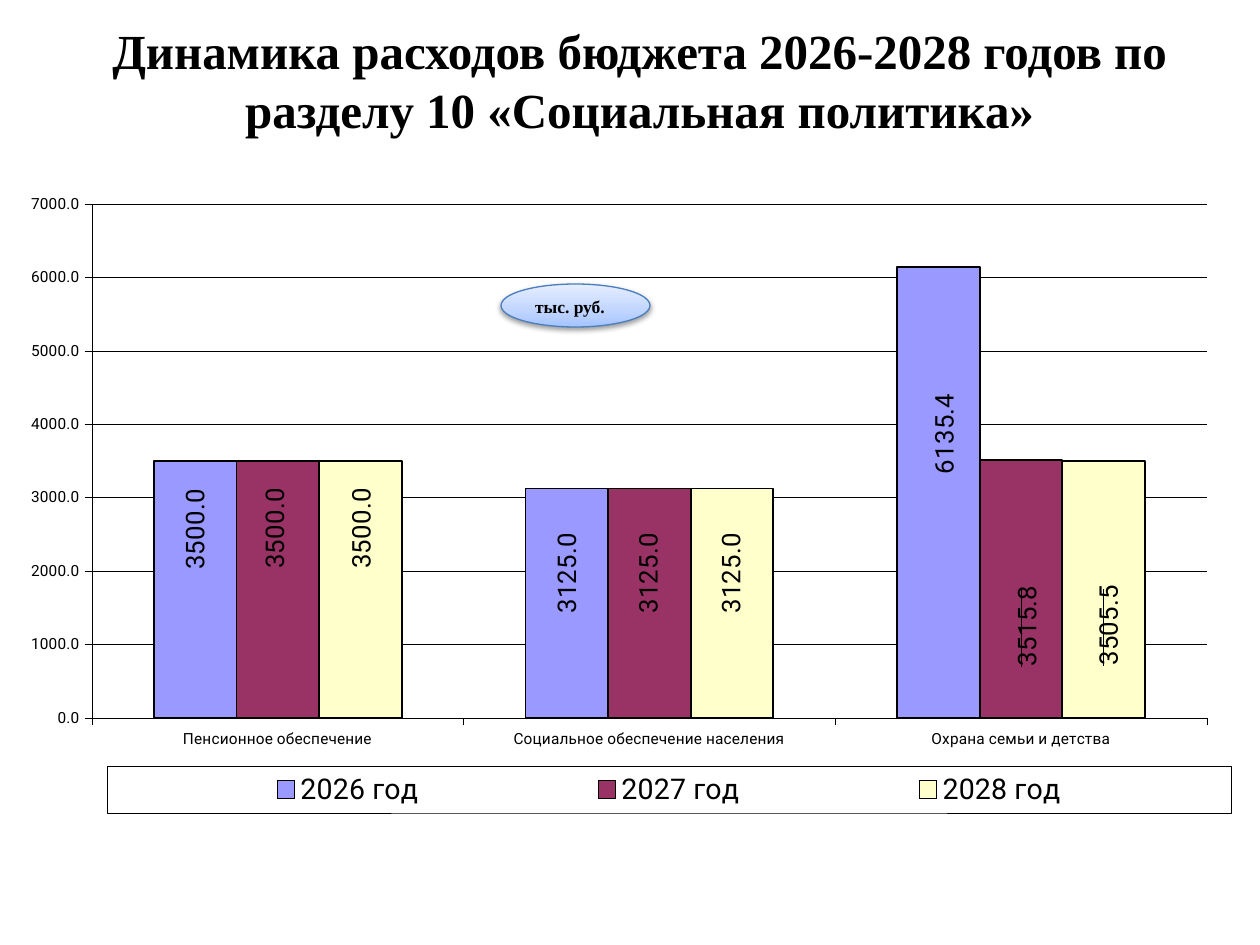
from copy import deepcopy

from pptx import Presentation
from pptx.chart.data import CategoryChartData
from pptx.dml.color import RGBColor
from pptx.enum.chart import XL_CHART_TYPE as CHART, XL_LABEL_POSITION as LABEL_POS
from pptx.enum.chart import XL_LEGEND_POSITION as LEGEND_POS, XL_TICK_LABEL_POSITION as TICK_POS
from pptx.enum.chart import XL_TICK_MARK as TICK
from pptx.enum.shapes import MSO_SHAPE as SHAPE
from pptx.enum.text import MSO_ANCHOR as ANCHOR, PP_ALIGN as ALIGN
from pptx.oxml import parse_xml
from pptx.oxml.ns import nsdecls, qn
from pptx.util import Emu, Pt

PX = 914400 / 126
BLACK = RGBColor(0x00, 0x00, 0x00)
BLUE = RGBColor(0x99, 0x99, 0xFF)
PLUM = RGBColor(0x99, 0x33, 0x66)
CREAM = RGBColor(0xFF, 0xFF, 0xCC)
BADGE_LINE = RGBColor(0x4B, 0x7E, 0xBC)
BADGE_STOPS = [(0, RGBColor(0xA4, 0xC4, 0xFF)),
               (35, RGBColor(0xBF, 0xD4, 0xFF)),
               (100, RGBColor(0xE6, 0xEE, 0xFF))]

CHART_BOX = (8, 181, 1225, 634)
PLOT_BOX = (92, 204, 1115, 514)
LEGEND_BOX = (107, 766, 1124, 47)
CATEGORIES = ["Пенсионное обеспечение", "Социальное обеспечение населения",
              "Охрана семьи и детства"]
# name, colour, values, label shifts from the bar centre in px
SERIES = [
    ("2026 год", BLUE, (3500, 3125, 6135.4), [(0, -60), (0, -30), (6, -59)]),
    ("2027 год", PLUM, (3500, 3125, 3515.8), [(-3, -61), (-1, -30), (6, 37)]),
    ("2028 год", CREAM, (3500, 3125, 3505.5), [(1, -61), (-1, -30), (5, 36)]),
]


def px(n):
    return Emu(round(n * PX))


def set_font(font, name, size, bold=False):
    values = {"name": name, "size": Pt(size), "bold": bold}
    for key, value in values.items():
        setattr(font, key, value)
    font.color.rgb = BLACK


def set_line(line, color, width):
    line.color.rgb = color
    line.width = Pt(width)


def set_text(sp, text, size, align, anchor):
    tf = sp.text_frame
    tf.word_wrap = True
    tf.vertical_anchor = anchor
    p = tf.paragraphs[0]
    p.alignment = align
    r = p.add_run()
    r.text = text
    set_font(r.font, "Times New Roman", size, bold=True)


def layout_xml(extra, **fractions):
    tags = "".join(f'<c:{key} val="{value:.4f}"/>' for key, value in fractions.items())
    return parse_xml(f'<c:layout {nsdecls("c")}><c:manualLayout>{extra}{tags}'
                     '</c:manualLayout></c:layout>')


def box_layout(box, target=""):
    """Layout of a chart part whose box is given in slide px."""
    left, top, width, height = CHART_BOX
    modes = '<c:xMode val="edge"/><c:yMode val="edge"/>'
    return layout_xml(target + modes, x=(box[0] - left) / width, y=(box[1] - top) / height,
                      w=box[2] / width, h=box[3] / height)


def style_axis(axis):
    axis.major_tick_mark = TICK.OUTSIDE
    axis.minor_tick_mark = TICK.NONE
    set_font(axis.tick_labels.font, "Roboto", 8.8)
    set_line(axis.format.line, BLACK, 0.28)


def style_legend(chart):
    chart.has_legend = True
    legend = chart.legend
    legend.position = LEGEND_POS.BOTTOM
    legend.include_in_layout = False
    set_font(legend.font, "Roboto", 16.3)
    element = legend._element
    element.find(qn("c:legendPos")).addnext(box_layout(LEGEND_BOX))
    element.find(qn("c:overlay")).addnext(parse_xml(
        f'<c:spPr {nsdecls("c", "a")}><a:noFill/><a:ln w="3556"><a:solidFill>'
        f'<a:srgbClr val="{BLACK}"/></a:solidFill></a:ln></c:spPr>'))


def add_labels(series, shifts):
    """Upright value labels, each moved from the centre of its bar."""
    labels = series.data_labels
    formats = {"show_value": True, "number_format": "0.0",
               "number_format_is_linked": False, "position": LABEL_POS.CENTER}
    for key, value in formats.items():
        setattr(labels, key, value)
    set_font(labels.font, "Roboto", 14.7)
    element = labels._element
    body = element.find(qn("c:txPr")).find(qn("a:bodyPr"))
    body.set("rot", "-5400000")
    body.set("vert", "horz")
    shared = [child for child in element if child.tag != qn("c:showLeaderLines")]
    for i, (dx, dy) in enumerate(shifts):
        label = parse_xml(f'<c:dLbl {nsdecls("c")}><c:idx val="{i}"/></c:dLbl>')
        label.append(layout_xml("", x=dx / CHART_BOX[2], y=dy / CHART_BOX[3]))
        for child in shared:
            label.append(deepcopy(child))
        element.insert(i, label)


def add_budget_chart(slide):
    data = CategoryChartData(number_format="0.0")
    data.categories = CATEGORIES
    for name, _, values, _ in SERIES:
        data.add_series(name, values)
    chart = slide.shapes.add_chart(CHART.COLUMN_CLUSTERED, *map(px, CHART_BOX), data).chart
    chart.has_title = False
    set_font(chart.font, "Roboto", 8.8)
    style_legend(chart)

    style_axis(chart.category_axis)
    chart.category_axis.tick_label_position = TICK_POS.LOW
    axis = chart.value_axis
    style_axis(axis)
    limits = {"minimum_scale": 0, "maximum_scale": 7000, "major_unit": 1000}
    for key, value in limits.items():
        setattr(axis, key, value)
    axis.tick_labels.number_format = "0.0"
    axis.tick_labels.number_format_is_linked = False
    set_line(axis.major_gridlines.format.line, BLACK, 0.28)

    plot = chart.plots[0]
    plot.vary_by_categories = False
    plot.gap_width = 150
    plot.overlap = 0
    for series, (_, color, _, shifts) in zip(plot.series, SERIES):
        series.format.fill.solid()
        series.format.fill.fore_color.rgb = color
        set_line(series.format.line, BLACK, 1.11)
        add_labels(series, shifts)

    area = chart._chartSpace.chart.plotArea
    for old in area.findall(qn("c:layout")):
        area.remove(old)
    area.insert(0, box_layout(PLOT_BOX, '<c:layoutTarget val="inner"/>'))


def add_title(slide, text, *box):
    sp = slide.shapes.add_textbox(*map(px, box))
    set_text(sp, text, 28, ALIGN.CENTER, ANCHOR.MIDDLE)


def add_unit_badge(slide, text, *box):
    sp = slide.shapes.add_shape(SHAPE.OVAL, *map(px, box))
    stops = "".join(f'<a:gs pos="{pos * 1000}"><a:srgbClr val="{color}"/></a:gs>'
                    for pos, color in BADGE_STOPS)
    properties = sp._element.spPr
    properties.append(parse_xml(
        f'<a:gradFill {nsdecls("a")} rotWithShape="1"><a:gsLst>{stops}</a:gsLst>'
        '<a:lin ang="16200000" scaled="1"/></a:gradFill>'))
    set_line(sp.line, BADGE_LINE, 0.75)
    properties.append(parse_xml(
        f'<a:effectLst {nsdecls("a")}><a:outerShdw blurRad="40000" dist="20000" '
        f'dir="5400000" rotWithShape="0"><a:srgbClr val="{BLACK}">'
        '<a:alpha val="38000"/></a:srgbClr></a:outerShdw></a:effectLst>'))
    set_text(sp, text, 10, ALIGN.LEFT, ANCHOR.TOP)


def main():
    prs = Presentation()
    prs.slide_width, prs.slide_height = px(1260), px(945)
    slide = prs.slides.add_slide(prs.slide_layouts[6])
    add_budget_chart(slide)
    add_title(slide, "Динамика расходов бюджета 2026-2028 годов по разделу 10 "
              "«Социальная политика»", 63, 53, 1153, 53)
    add_unit_badge(slide, "тыс. руб.", 501, 284, 149, 43)
    prs.save("out.pptx")


if __name__ == "__main__":
    main()
